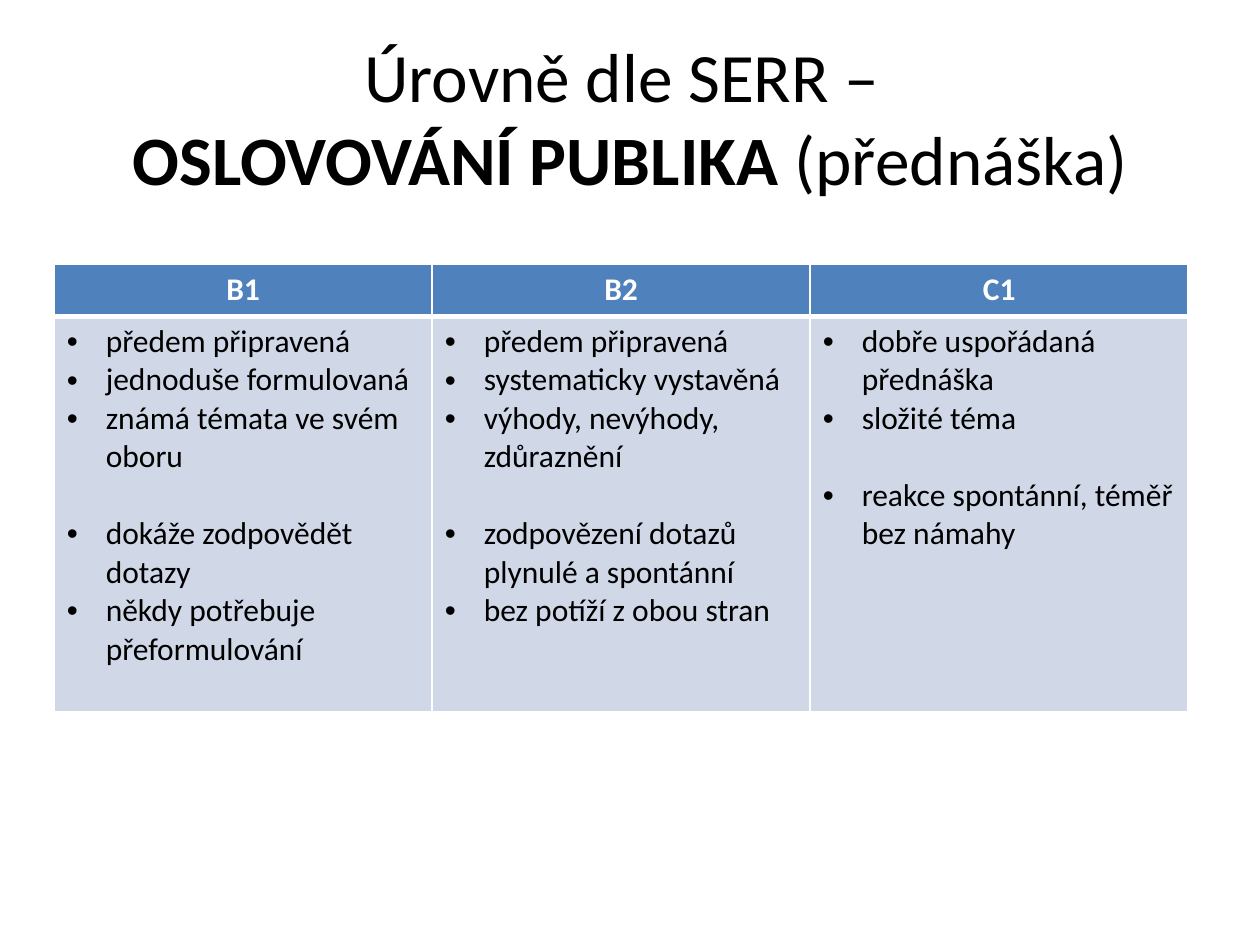
from dataclasses import dataclass

import pptx
import pptx.dml.color
import pptx.enum.text
import pptx.oxml
import pptx.oxml.ns
import pptx.oxml.xmlchemy
import pptx.table
import pptx.util
from lxml import etree

Inches = pptx.util.Inches
Pt = pptx.util.Pt
RGB = pptx.dml.color.RGBColor.from_string
CENTER = pptx.enum.text.PP_ALIGN.CENTER
qn = pptx.oxml.ns.qn


@dataclass(frozen=True)
class Theme:
    font: str = "Calibri"
    title_size: float = 39.6
    body_size: float = 18
    section_gap: float = 22
    text: str = "000000"
    light: str = "FFFFFF"
    header: str = "4F81BD"
    body: str = "D0D8E8"
    thin: float = 1
    thick: float = 3


@dataclass(frozen=True)
class Level:
    name: str
    talk: tuple[str, ...]
    questions: tuple[str, ...]


THEME = Theme()
WIDTH, HEIGHT = Inches(10), Inches(7.5)
COLUMN = 0.3
HEADER_ROW, BODY_ROW = Inches(0.41), Inches(3.14)
INDENT = Inches(0.31)

LEVELS = (
    Level("B1",
          ("předem připravená", "jednoduše formulovaná", "známá témata ve svém oboru"),
          ("dokáže zodpovědět dotazy", "někdy potřebuje přeformulování")),
    Level("B2",
          ("předem připravená", "systematicky vystavěná", "výhody, nevýhody, zdůraznění"),
          ("zodpovězení dotazů plynulé a spontánní", "bez potíží z obou stran")),
    Level("C1",
          ("dobře uspořádaná přednáška", "složité téma"),
          ("reakce spontánní, téměř bez námahy",)),
)


def style(p, size: float, color: str, bold: bool | None = None) -> None:
    p.font.name = THEME.font
    p.font.size = Pt(size)
    p.font.color.rgb = RGB(color)
    p.font.bold = bold


def add_title(slide) -> None:
    sp = slide.shapes.add_textbox(
        int(WIDTH * 0.05), int(HEIGHT * 0.04), int(WIDTH * 0.9), Inches(1.25))
    tf = sp.text_frame
    tf.word_wrap = True
    tf.vertical_anchor = pptx.enum.text.MSO_ANCHOR.MIDDLE
    p = tf.paragraphs[0]
    p.alignment = CENTER
    style(p, THEME.title_size, THEME.text)
    p.add_run().text = "Úrovně dle SERR – "
    p.add_line_break()
    r = p.add_run()
    r.text = "OSLOVOVÁNÍ PUBLIKA "
    r.font.bold = True
    p.add_run().text = "(přednáška)"


def paint_cell(cell: pptx.table._Cell, fill: str, top: float, bottom: float) -> None:
    props = cell._tc.get_or_add_tcPr()
    widths = {"lnL": THEME.thin, "lnR": THEME.thin, "lnT": top, "lnB": bottom}
    for tag, width in widths.items():
        line = etree.SubElement(props, qn(f"a:{tag}"), w=str(Pt(width)))
        solid = etree.SubElement(line, qn("a:solidFill"))
        etree.SubElement(solid, qn("a:srgbClr"), val=THEME.light)
    cell.fill.solid()
    cell.fill.fore_color.rgb = RGB(fill)


def add_bullet(p) -> None:
    props = p._p.get_or_add_pPr()
    props.set("marL", str(INDENT))
    props.set("indent", str(-INDENT))
    font = etree.Element(qn("a:buFont"), typeface="Arial")
    char = etree.Element(qn("a:buChar"), char="•")
    defaults = props.find(qn("a:defRPr"))
    defaults.addprevious(font)
    defaults.addprevious(char)


def fill_level(tbl: pptx.table.Table, col: int, level: Level) -> None:
    head, body = tbl.cell(0, col), tbl.cell(1, col)
    paint_cell(head, THEME.header, THEME.thin, THEME.thick)
    paint_cell(body, THEME.body, THEME.thick, THEME.thin)
    p = head.text_frame.paragraphs[0]
    p.text = level.name
    p.alignment = CENTER
    style(p, THEME.body_size, THEME.light, True)
    tf = body.text_frame
    for i, item in enumerate(level.talk + level.questions):
        p = tf.add_paragraph() if i else tf.paragraphs[0]
        p.text = item
        if i == len(level.talk):
            p.space_before = Pt(THEME.section_gap)
        style(p, THEME.body_size, THEME.text, False)
        add_bullet(p)


def add_levels(slide) -> None:
    tbl = slide.shapes.add_table(
        2, len(LEVELS), Inches(0.43), int(HEIGHT * 0.28),
        int(WIDTH * COLUMN * len(LEVELS)), HEADER_ROW + BODY_ROW).table
    tbl.horz_banding = False
    tbl.rows[0].height, tbl.rows[1].height = HEADER_ROW, BODY_ROW
    for col, level in enumerate(LEVELS):
        fill_level(tbl, col, level)


def main() -> None:
    prs = pptx.Presentation()
    prs.slide_width, prs.slide_height = WIDTH, HEIGHT
    slide = prs.slides.add_slide(prs.slide_layouts[6])
    add_title(slide)
    add_levels(slide)
    prs.save("out.pptx")


if __name__ == "__main__":
    main()
